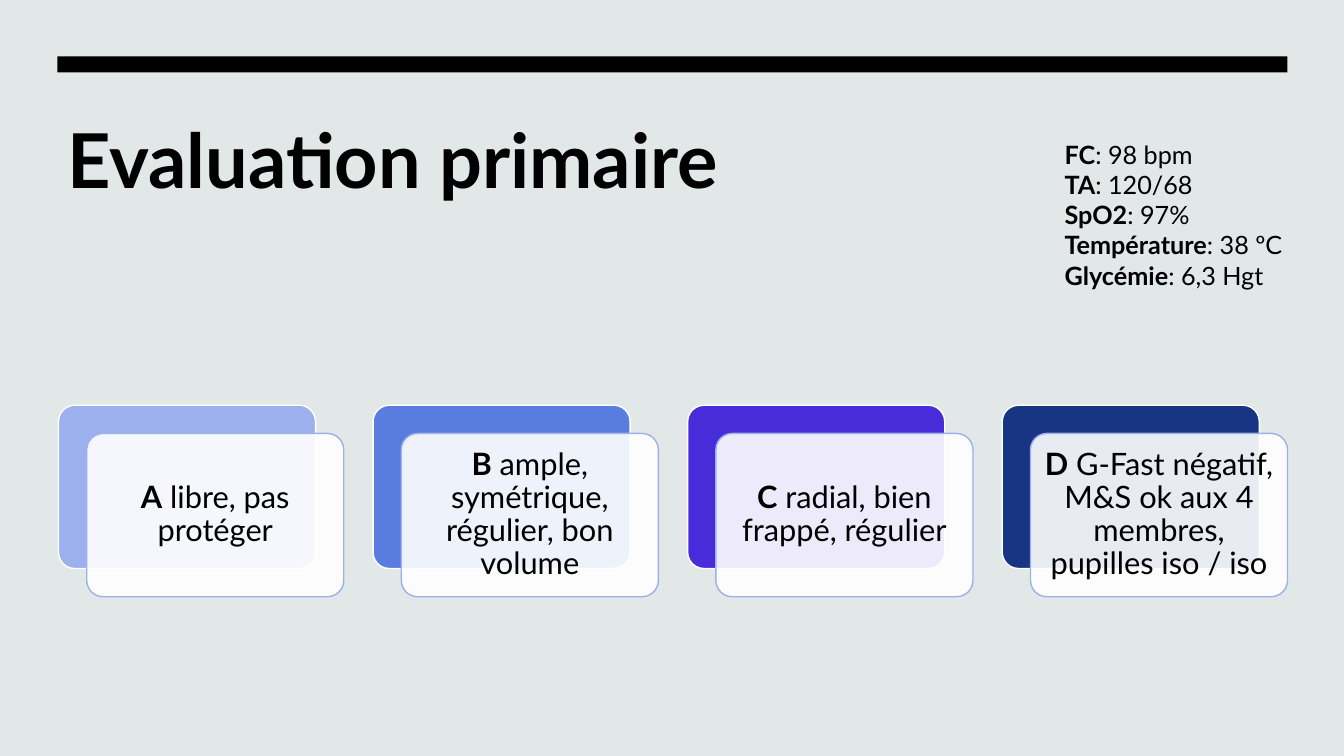
from lxml import etree
from pptx import Presentation
from pptx.dml.color import RGBColor
from pptx.enum.shapes import MSO_SHAPE
from pptx.enum.text import MSO_ANCHOR, PP_ALIGN
from pptx.oxml.ns import qn
from pptx.util import Inches, Pt

RECT = MSO_SHAPE.RECTANGLE
ROUND = MSO_SHAPE.ROUNDED_RECTANGLE
MIDDLE = MSO_ANCHOR.MIDDLE
CENTER = PP_ALIGN.CENTER

FONT = "Lato"
COLORS = {
    "background": "E2E8E7",
    "black": "000000",
    "white": "FFFFFF",
    "airway": "9BB0EC",
    "breathing": "587CE0",
    "circulation": "482CD9",
    "disability": "183584",
}

VITALS = [
    ("FC", ": 98 bpm"),
    ("TA", ": 120/68"),
    ("SpO2", ": 97%"),
    ("Température", ": 38 ºC"),
    ("Glycémie", ": 6,3 Hgt"),
]
STEPS = [
    ("airway", "A", " libre, pas protéger"),
    ("breathing", "B", " ample, symétrique, régulier, bon volume"),
    ("circulation", "C", " radial, bien frappé, régulier"),
    ("disability", "D", " G-Fast négatif, M&S ok aux 4 membres, pupilles iso / iso"),
]
CARD_LEFT, CARD_TOP = 0.58, 4.02
CARD_WIDTH, CARD_HEIGHT = 2.55, 1.62
CARD_STEP = 3.12
CARD_OFFSET = 0.28


class SlideBuilder:
    def __init__(self, prs):
        self.s = prs.slides.add_slide(prs.slide_layouts[6])
        fill = self.s.background.fill
        fill.solid()
        fill.fore_color.rgb = self.color("background")

    def color(self, name):
        return RGBColor.from_string(COLORS[name])

    def shape(self, kind, left, top, width, height, fill, line=None):
        sp = self.s.shapes.add_shape(
            kind, Inches(left), Inches(top), Inches(width), Inches(height))
        sp.shadow.inherit = False
        sp.fill.solid()
        sp.fill.fore_color.rgb = self.color(fill)
        if line:
            sp.line.color.rgb = self.color(line)
            sp.line.width = Pt(1)
        else:
            sp.line.fill.background()
        return sp

    def run(self, p, text, size, bold):
        r = p.add_run()
        r.text = text
        r.font.name = FONT
        r.font.size = Pt(size)
        r.font.bold = bold
        r.font.color.rgb = self.color("black")

    def labelled(self, p, label, text, size):
        self.run(p, label, size, True)
        self.run(p, text, size, False)

    def textbox(self, left, top, width, height):
        sp = self.s.shapes.add_textbox(
            Inches(left), Inches(top), Inches(width), Inches(height))
        sp.text_frame.word_wrap = True
        return sp.text_frame

    def title(self, text):
        tf = self.textbox(0.57, 1.07, 12.2, 1.79)
        self.run(tf.paragraphs[0], text, 54, True)

    def vitals(self, rows):
        tf = self.textbox(10.46, 1.33, 2.45, 1.62)
        for i, (label, value) in enumerate(rows):
            p = tf.add_paragraph() if i else tf.paragraphs[0]
            self.labelled(p, label, value, 18)

    def card(self, left, color, letter, text):
        back = self.shape(ROUND, left, CARD_TOP, CARD_WIDTH, CARD_HEIGHT,
                          color, "white")
        front = self.shape(ROUND, left + CARD_OFFSET, CARD_TOP + CARD_OFFSET,
                           CARD_WIDTH, CARD_HEIGHT, "white", "airway")
        for sp in (back, front):
            sp.adjustments[0] = 0.1
        white = front.fill._xPr.find(qn("a:solidFill"))[0]
        etree.SubElement(white, qn("a:alpha"), val="90000")
        tf = front.text_frame
        tf.word_wrap = True
        tf.vertical_anchor = MIDDLE
        tf.margin_left = tf.margin_right = Inches(0.09)
        tf.margin_top = tf.margin_bottom = Inches(0.09)
        p = tf.paragraphs[0]
        p.alignment = CENTER
        p.line_spacing = 0.9
        self.labelled(p, letter, text, 22)


def main():
    prs = Presentation()
    prs.slide_width = Inches(13.33)
    prs.slide_height = Inches(7.5)
    slide = SlideBuilder(prs)
    slide.title("Evaluation primaire")
    slide.shape(RECT, 0.57, 0.56, 12.2, 0.16, "black")
    for i, (color, letter, text) in enumerate(STEPS):
        slide.card(CARD_LEFT + i * CARD_STEP, color, letter, text)
    slide.vitals(VITALS)
    prs.save("out.pptx")


if __name__ == "__main__":
    main()
